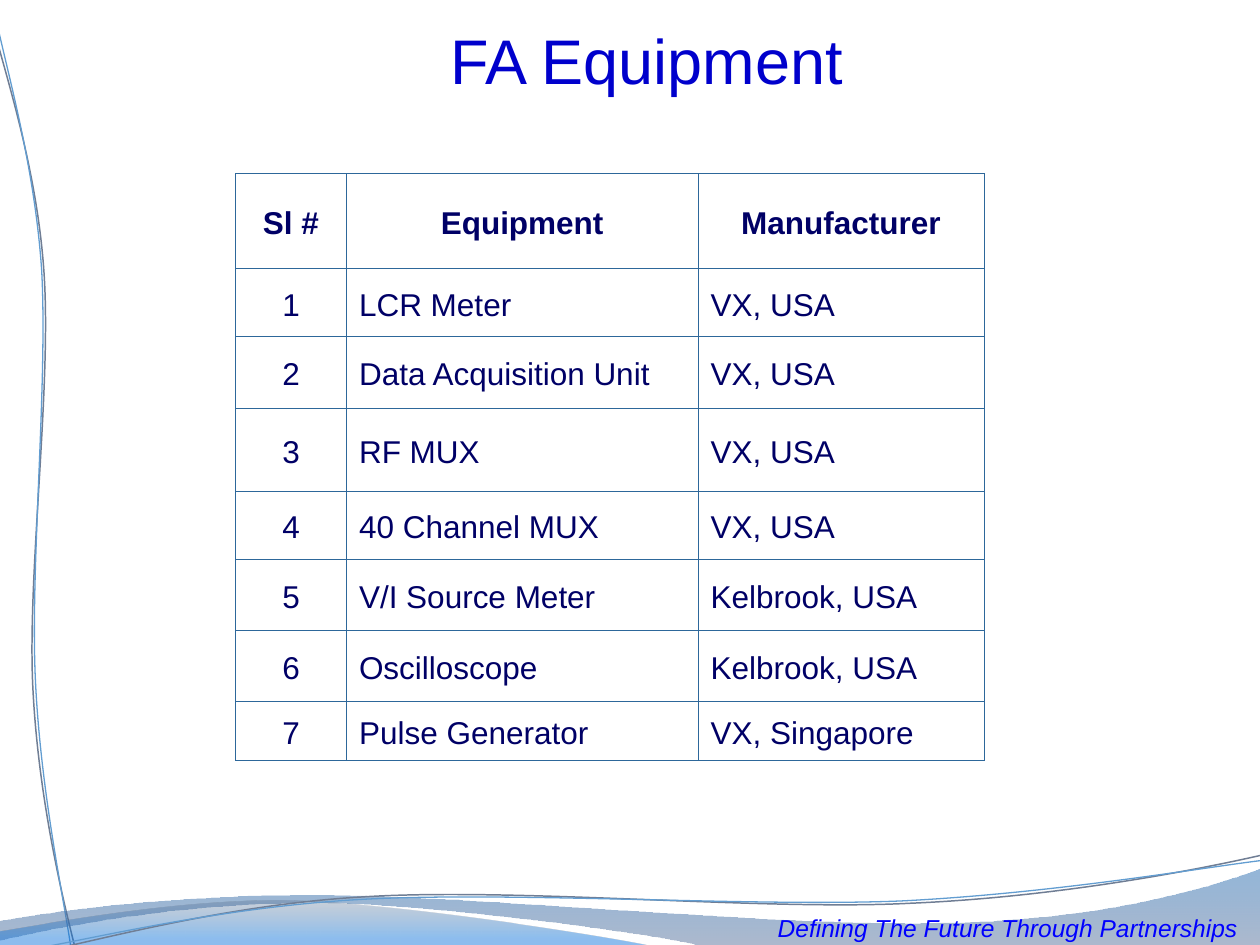
from pptx import Presentation
from pptx.dml.color import RGBColor
from pptx.enum.text import MSO_ANCHOR, PP_ALIGN
from pptx.oxml import parse_xml
from pptx.oxml.ns import nsdecls, qn
from pptx.util import Pt

LEFT, CENTER = PP_ALIGN.LEFT, PP_ALIGN.CENTER
TOP, MIDDLE = MSO_ANCHOR.TOP, MSO_ANCHOR.MIDDLE

TITLE_BLUE = RGBColor(0x00, 0x00, 0xCC)
FOOTER_BLUE = RGBColor(0x00, 0x00, 0xFF)
NAVY = RGBColor(0x00, 0x00, 0x66)
BORDER = RGBColor(0x2D, 0x67, 0x9A)
SLATE = RGBColor(0x70, 0x7E, 0x95)
SKY = RGBColor(0x62, 0x9D, 0xD1)
BAND_BLUE = RGBColor(0x12, 0x5E, 0xAA)
BAND_GREY = RGBColor(0x69, 0x7F, 0xA4)
SWELL_GREY = RGBColor(0x59, 0x69, 0x82)
SWELL_BLUE = RGBColor(0x06, 0x70, 0xDA)

FONT = "Arial"

# Outlines in points: a pair is a corner, three pairs are a Bezier curve
# (two control points and the end point).
STRANDS = [
    (SLATE, 0.85, [(42.5, 540),
                   ((36, 514), (21.6, 455), (18.7, 391)),
                   ((15.8, 327), (29.5, 221), (25.2, 156.2)),
                   ((20.9, 91.4), (0, 33.8), (-7.2, 2.2))]),
    (SKY, 0.75, [(40.3, 540),
                 ((36.7, 514.8), (23, 451.4), (20.2, 387.4)),
                 ((17.3, 323.3), (27.4, 218.2), (23.8, 154.1)),
                 ((19.4, 89.3), (1.4, 32.4), (-4.3, 0.7))]),
]
WAVE_LINES = [
    (SLATE, 0.85, [(720, 488.9),
                   ((685.4, 496.8), (605.5, 512.6), (519.8, 516.2)),
                   ((434.9, 520.6), (293.8, 506.9), (206.6, 512.6)),
                   ((120.2, 517.7), (43.2, 541.4), (0.7, 548.6))]),
    (SKY, 0.75, [(720, 491.8),
                 ((685.4, 496.1), (601.2, 510.5), (515.5, 514.8)),
                 ((429.1, 518.4), (290.2, 509), (203.8, 514.1)),
                 ((118.1, 519.1), (41.8, 539.3), (-0.7, 545.8))]),
]
# Each gradient stop: position, colour, opacity in percent
WAVE_BANDS = [
    ([(0, BAND_BLUE, 45), (1, BAND_GREY, 55)],
     [(719.3, 540.7), (402.5, 540.7),
      ((377.3, 533.5), (241.9, 515.5), (173.5, 515.5)),
      ((105.1, 515.5), (29.5, 529.9), (-0.7, 537.1)),
      (-1.4, 526.3),
      ((11.5, 523.4), (93.6, 510.5), (182.2, 511.2)),
      ((271.4, 511.2), (445, 529.2), (534.2, 527)),
      ((626.4, 526.3), (686.2, 508.3), (720, 496.1))]),
    ([(0, SWELL_GREY, 30), (0.8, SWELL_BLUE, 45)],
     [(374.4, 540.7),
      ((352.8, 535.7), (228.2, 516.2), (166.3, 514.8)),
      ((103.7, 513.4), (27.4, 527.8), (-0.7, 532.1)),
      (-0.7, 540)]),
]

COLUMN_WIDTHS = [63.4, 200.9, 163.4]
ROW_HEIGHTS = [54.4, 38.9, 40.6, 47.8, 38.6, 40.6, 40.9, 33.8]
HEADINGS = ["Sl #", "Equipment", "Manufacturer"]
EQUIPMENT = [
    ("LCR Meter", "VX, USA"),
    ("Data Acquisition Unit", "VX, USA"),
    ("RF MUX", "VX, USA"),
    ("40 Channel MUX", "VX, USA"),
    ("V/I Source Meter", "Kelbrook, USA"),
    ("Oscilloscope", "Kelbrook, USA"),
    ("Pulse Generator", "VX, Singapore"),
]


def add_outline(page, outline, close):
    """Freeform whose three-pair parts become true Bezier curves."""
    start, *parts = outline
    segments = [part if len(part) == 3 else (part,) for part in parts]
    vertices = [(Pt(x), Pt(y)) for segment in segments for x, y in segment]
    builder = page.shapes.build_freeform(Pt(start[0]), Pt(start[1]))
    builder.add_line_segments(vertices, close=close)
    shape = builder.convert_to_shape()
    shape.shadow.inherit = False

    # Gather each curve's three points into one Bezier element
    steps = iter(list(shape._element.spPr.iter(qn("a:lnTo"))))
    for segment in segments:
        lines = [next(steps) for _ in segment]
        if len(lines) == 3:
            curve = parse_xml(f'<a:cubicBezTo {nsdecls("a")}/>')
            lines[0].addprevious(curve)
            for line in lines:
                curve.append(line[0])
                line.getparent().remove(line)
    return shape


def add_curve(page, color, width, outline):
    curve = add_outline(page, outline, close=False)
    curve.fill.background()
    curve.line.color.rgb = color
    curve.line.width = Pt(width)


def add_band(page, stops, outline):
    band = add_outline(page, outline, close=True)
    band.line.fill.background()
    band.fill.gradient()
    band.fill.gradient_angle = 270  # first stop at the top
    for stop, (position, color, _) in zip(band.fill.gradient_stops, stops):
        stop.position = position
        stop.color.rgb = color
    # Opacity of each stop
    colors = band._element.spPr.find(qn("a:gradFill")).iter(qn("a:srgbClr"))
    for element, (_, _, opacity) in zip(list(colors), stops):
        element.append(parse_xml(f'<a:alpha {nsdecls("a")} val="{opacity * 1000}"/>'))


def write(frame, text, size, color, align=CENTER, bold=False, italic=False):
    frame.word_wrap = True
    para = frame.paragraphs[0]
    para.alignment = align
    span = para.add_run()
    span.text = text
    font = span.font
    font.name, font.size, font.color.rgb = FONT, Pt(size), color
    font.bold, font.italic = bold, italic
    return para


def add_title(page):
    title = page.shapes.title
    title.left, title.top = Pt(144.7), Pt(8.6)
    title.width, title.height = Pt(450), Pt(51)
    title.text_frame.vertical_anchor = TOP
    write(title.text_frame, "FA Equipment", 36, TITLE_BLUE)


def add_footer(page):
    box = page.shapes.add_textbox(Pt(375.8), Pt(518.4), Pt(400.3), Pt(13))
    write(box.text_frame, "Defining The Future Through Partnerships", 14,
          FOOTER_BLUE, italic=True)


def fill_cell(cell, text, align, bold):
    properties = cell._tc.get_or_add_tcPr()
    for side in "LRTB":
        properties.append(parse_xml(
            f'<a:ln{side} {nsdecls("a")} w="{Pt(0.5)}"><a:solidFill>'
            f'<a:srgbClr val="{BORDER}"/></a:solidFill></a:ln{side}>'))
    cell.fill.background()
    cell.vertical_anchor = MIDDLE
    cell.margin_left = cell.margin_right = Pt(7.2)
    cell.margin_top = cell.margin_bottom = Pt(3.6)
    para = write(cell.text_frame, text, 18, NAVY, align, bold)
    para.line_spacing = 1.15


def add_equipment_table(page):
    rows = [HEADINGS] + [(str(number), *item)
                         for number, item in enumerate(EQUIPMENT, 1)]
    table = page.shapes.add_table(
        len(rows), len(HEADINGS), Pt(134.6), Pt(99.2),
        Pt(sum(COLUMN_WIDTHS)), Pt(sum(ROW_HEIGHTS))).table
    table.first_row = table.horz_banding = False
    for column, width in zip(table.columns, COLUMN_WIDTHS):
        column.width = Pt(width)
    for row, height in zip(table.rows, ROW_HEIGHTS):
        row.height = Pt(height)
    for r, texts in enumerate(rows):
        for c, text in enumerate(texts):
            align = CENTER if r == 0 or c == 0 else LEFT
            fill_cell(table.cell(r, c), text, align, bold=r == 0)


def main():
    deck = Presentation()
    deck.slide_width, deck.slide_height = Pt(720), Pt(540)
    page = deck.slides.add_slide(deck.slide_layouts[5])

    # Decoration along the left and bottom edges
    for strand in STRANDS:
        add_curve(page, *strand)
    for band in WAVE_BANDS:
        add_band(page, *band)
    for line in WAVE_LINES:
        add_curve(page, *line)

    # Content
    add_footer(page)
    add_title(page)
    add_equipment_table(page)
    deck.save("out.pptx")


if __name__ == "__main__":
    main()
